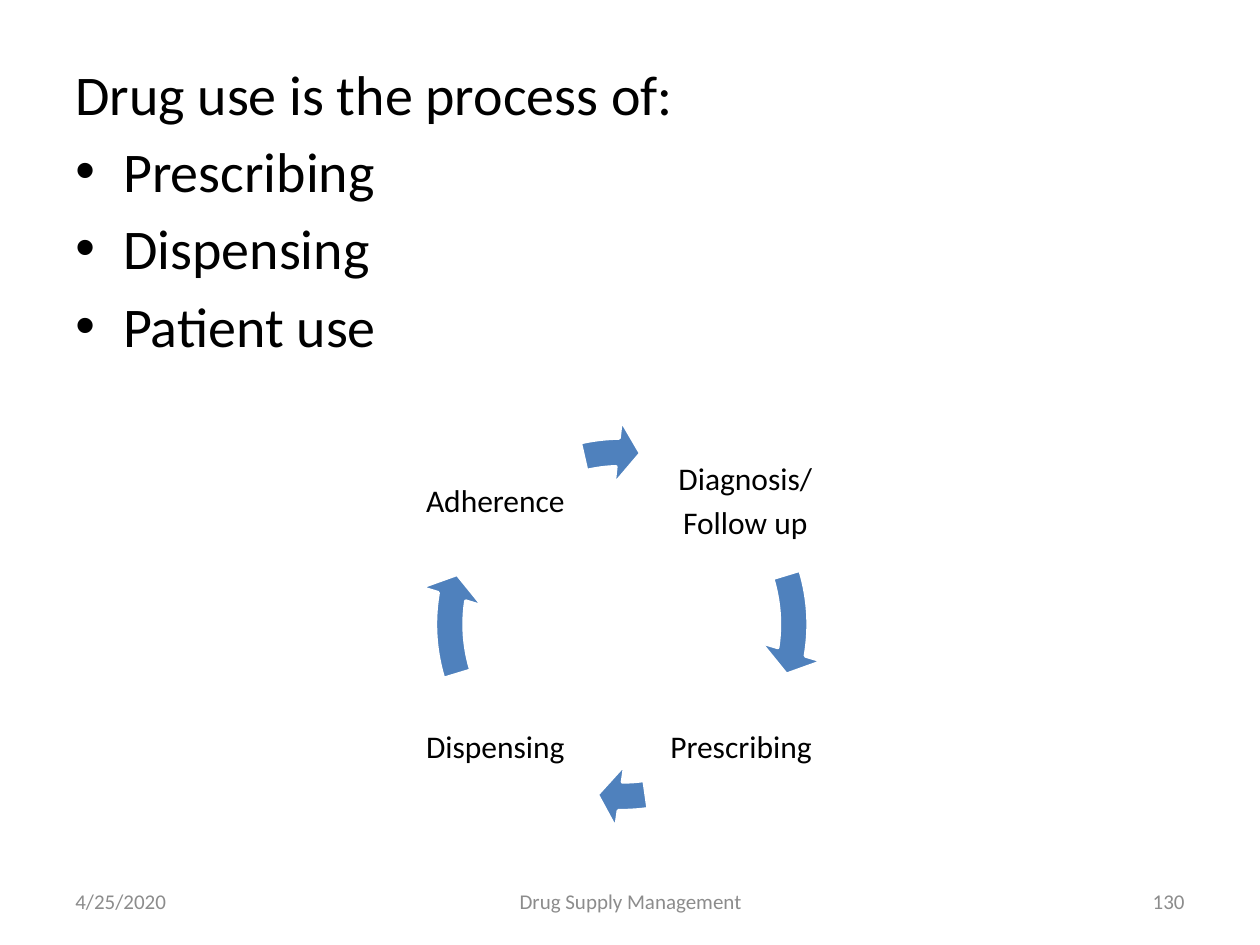
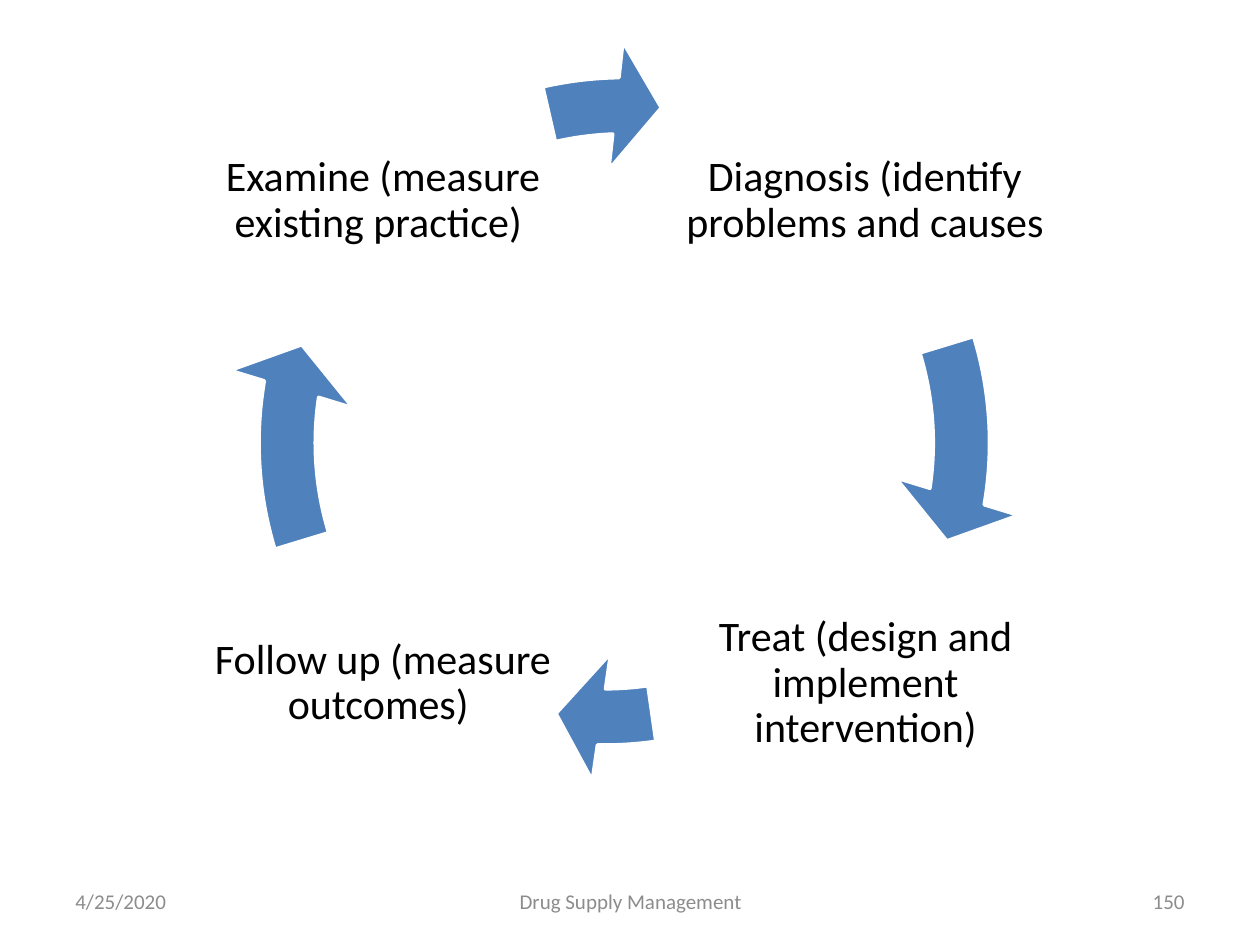
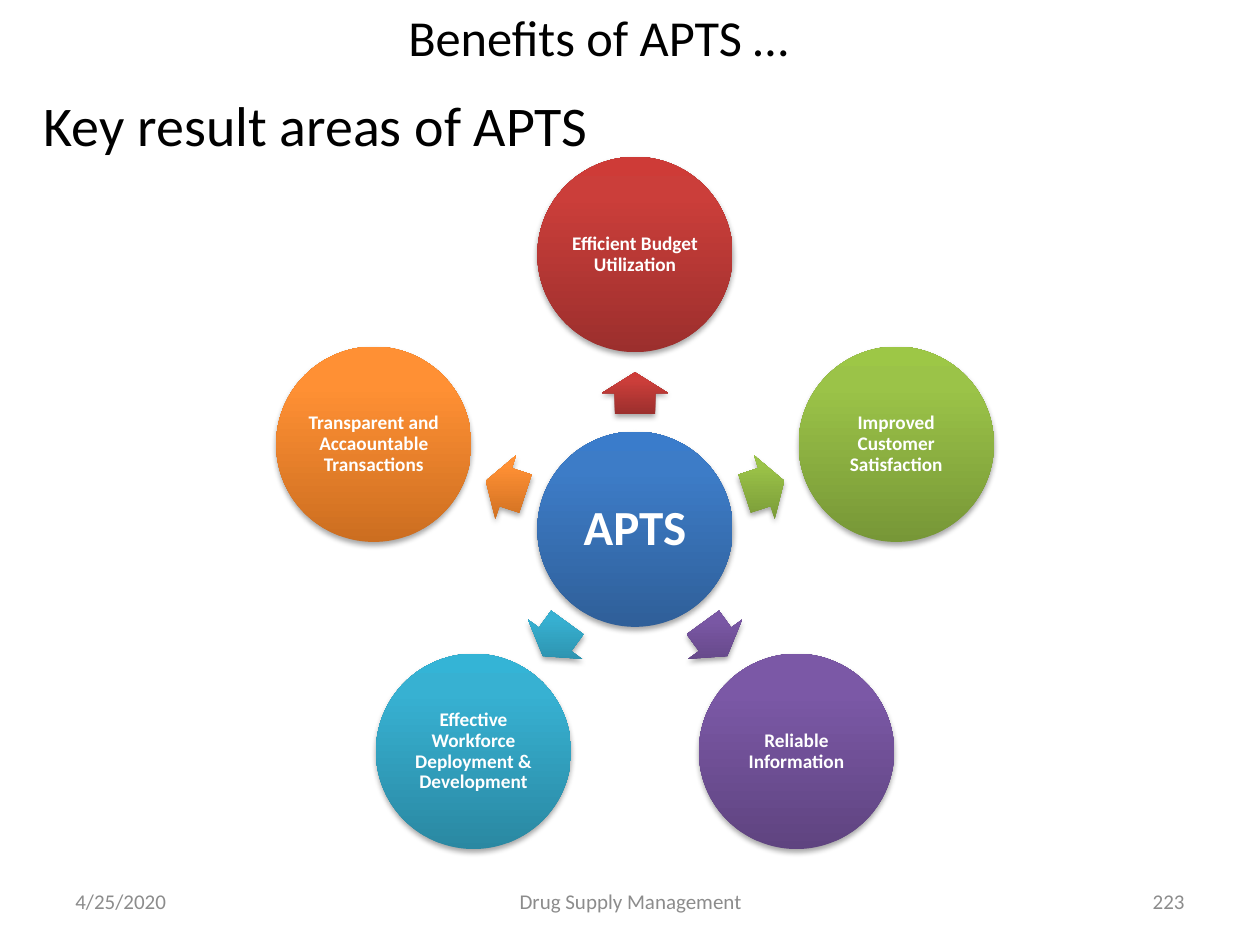
"""Build three slides on drug use, its improvement cycle and APTS benefits."""
from dataclasses import dataclass
from math import cos, radians, sin

from pptx import Presentation
from pptx.dml.color import RGBColor
from pptx.enum.shapes import MSO_SHAPE
from pptx.enum.text import MSO_ANCHOR, PP_ALIGN
from pptx.oxml import parse_xml
from pptx.oxml.ns import nsdecls
from pptx.util import Inches, Pt

LEFT, CENTER, RIGHT = PP_ALIGN.LEFT, PP_ALIGN.CENTER, PP_ALIGN.RIGHT
TOP, MIDDLE = MSO_ANCHOR.TOP, MSO_ANCHOR.MIDDLE
OVAL, ARROW, CURVE = MSO_SHAPE.OVAL, MSO_SHAPE.RIGHT_ARROW, MSO_SHAPE.CIRCULAR_ARROW

FONT = "Calibri"
BLACK, WHITE, GREY, BLUE = "000000", "FFFFFF", "8C8C8C", "4F81BD"
HUB_X, HUB_Y, BALL = 5.04, 4.2, 1.55
SPOKE, REACH = 2.18, 1.08
TIPS = [(5.5, 205.85), (54.27, 49.11), (113.5, 97.85), (161.14, 154.27)]


@dataclass
class Style:
    """Look of a block of text."""
    size: float
    color: str = BLACK
    bold: bool = False
    align: PP_ALIGN = LEFT
    anchor: MSO_ANCHOR = TOP
    before: float = 0
    after: float = 0
    lead: float = 1.0
    inset: tuple[float, float] = (0.1, 0.05)


@dataclass
class Label:
    """Text at a place, in inches."""
    lines: list[str]
    left: float
    top: float
    width: float
    height: float


@dataclass
class Wheel:
    """Ring of four labels joined by curved arrows."""
    size: float
    side: float
    rings: list[tuple[float, float]]
    labels: list[Label]


@dataclass
class Ball:
    """Shaded circle with its caption."""
    text: str
    dark: str
    mid: str
    light: str


BODY = Style(32, before=5.8)
TITLE = Style(28.8, align=CENTER, anchor=MIDDLE)

USE = Wheel(18, 3.25, [(3.31, 3.33)] * 4, [
    Label(["Diagnosis/", "Follow up"], 5.09, 3.41, 1.65, 1.15),
    Label(["Prescribing "], 5.13, 5.36, 1.56, 1.15),
    Label(["Dispensing "], 3.18, 5.36, 1.56, 1.15),
    Label(["Adherence "], 3.29, 3.41, 1.34, 1.15),
])
CYCLE = Wheel(24, 6.37, [(1.77, 0.33), (1.61, -0.17), (1.77, 0.33), (1.77, 0.33)], [
    Label(["Diagnosis (identify problems and causes"], 5.25, 0.47, 3.23, 2.25),
    Label(["Treat (design and implement intervention)"], 5.34, 4.3, 3.06, 2.25),
    Label(["Follow up (measure outcomes) "], 1.51, 4.3, 3.06, 2.25),
    Label(["Examine (measure existing practice) "], 1.73, 0.47, 2.62, 2.25),
])
HUB = Ball("APTS", "2F5F99", "3D7CC7", "3A7CCB")
BALLS = [
    Ball("Efficient Budget Utilization", "9C2F2D", "CB3E3A", "CE3B37"),
    Ball("Improved Customer Satisfaction", "779737", "9BC348", "9DC746"),
    Ball("Reliable Information", "5F4480", "7B58A6", "7C57A8"),
    Ball("Effective Workforce Deployment & Development", "2A88A2", "37B1D2", "34B4D6"),
    Ball("Transparent and Accaountable Transactions", "CC6E20", "FF9034", "FF9136"),
]


def rgb(code: str) -> RGBColor:
    """Turn a hex string into a colour."""
    return RGBColor.from_string(code)


def tight(size: float, color: str = BLACK, bold: bool = False, inset: float = 0.03) -> Style:
    """Return the centred style used inside diagrams."""
    return Style(size, color, bold, CENTER, MIDDLE, after=round(size / 3, 1),
                 lead=0.9, inset=(inset, inset))


def write(shape, lines: list[str], style: Style) -> None:
    """Fill a shape with styled paragraphs."""
    frame = shape.text_frame
    frame.word_wrap = True
    frame.vertical_anchor = style.anchor
    frame.margin_left = frame.margin_right = Inches(style.inset[0])
    frame.margin_top = frame.margin_bottom = Inches(style.inset[1])
    frame.text = "\n".join(lines)
    for para in frame.paragraphs:
        para.alignment = style.align
        para.line_spacing = style.lead
        para.space_before = Pt(style.before)
        para.space_after = Pt(style.after)
        font = para.font
        font.name, font.size, font.bold = FONT, Pt(style.size), style.bold
        font.color.rgb = rgb(style.color)


def put(slide, label: Label, style: Style):
    """Add a text box."""
    box = slide.shapes.add_textbox(Inches(label.left), Inches(label.top),
                                   Inches(label.width), Inches(label.height))
    write(box, label.lines, style)
    return box


def dot(para) -> None:
    """Give a paragraph a hanging bullet."""
    props = para._p.get_or_add_pPr()
    props.set("marL", str(Inches(0.38)))
    props.set("indent", str(-Inches(0.38)))
    props.append(parse_xml(f'<a:buFont {nsdecls("a")} typeface="Arial"/>'))
    props.append(parse_xml(f'<a:buChar {nsdecls("a")} char="•"/>'))


def spin(slide, wheel: Wheel) -> None:
    """Draw a wheel of labels and curved arrows."""
    for label, ring, (tip, tail) in zip(wheel.labels, wheel.rings, TIPS):
        put(slide, label, tight(wheel.size))
        arrow = slide.shapes.add_shape(CURVE, Inches(ring[0]), Inches(ring[1]),
                                       Inches(wheel.side), Inches(wheel.side))
        arrow.shadow.inherit = False
        for spot, value in enumerate((0.07, 4.65, tip, tail, 0.08)):
            arrow.adjustments[spot] = value
        arrow.fill.solid()
        arrow.fill.fore_color.rgb = rgb(BLUE)
        arrow.line.color.rgb = rgb(WHITE)
        arrow.line.width = Pt(2)


def shade(slide, kind: MSO_SHAPE, x: float, y: float, width: float, height: float, ball: Ball):
    """Add a shape centred on a point, with gradient and shadow."""
    shape = slide.shapes.add_shape(kind, Inches(x - width / 2), Inches(y - height / 2),
                                   Inches(width), Inches(height))
    stops = "".join(
        f'<a:gs pos="{spot}"><a:srgbClr val="{code}"/></a:gs>'
        for spot, code in ((0, ball.dark), (80000, ball.mid), (100000, ball.light)))
    props = shape._element.spPr
    props.append(parse_xml(
        f'<a:gradFill {nsdecls("a")} rotWithShape="0"><a:gsLst>{stops}</a:gsLst>'
        '<a:lin ang="16200000" scaled="0"/></a:gradFill>'))
    shape.line.fill.background()
    props.append(parse_xml(
        f'<a:effectLst {nsdecls("a")}><a:outerShdw blurRad="40000" dist="23000" '
        'dir="5400000" rotWithShape="0"><a:srgbClr val="000000"><a:alpha val="35000"/>'
        '</a:srgbClr></a:outerShdw></a:effectLst>'))
    return shape


def spread(slide) -> None:
    """Draw the hub and the balls around it."""
    hub = shade(slide, OVAL, HUB_X, HUB_Y, BALL, BALL, HUB)
    write(hub, [HUB.text], tight(28, WHITE, True, 0.04))
    for step, ball in enumerate(BALLS):
        angle = 360 / len(BALLS) * step - 90
        across, down = cos(radians(angle)), sin(radians(angle))
        arrow = shade(slide, ARROW, HUB_X + REACH * across, HUB_Y + REACH * down,
                      0.33, 0.53, ball)
        arrow.adjustments[0] = 0.6
        arrow.rotation = angle % 360
        disc = shade(slide, OVAL, HUB_X + SPOKE * across, HUB_Y + SPOKE * down,
                     BALL, BALL, ball)
        write(disc, [ball.text], tight(11, WHITE, True, 0.02))


def foot(slide, page: str) -> None:
    """Add date, page number and deck name."""
    for text, left, width, align in (("4/25/2020", 0.5, 2.33, LEFT),
                                     (page, 7.17, 2.33, RIGHT),
                                     ("Drug Supply Management", 3.42, 3.17, CENTER)):
        put(slide, Label([text], left, 6.95, width, 0.4),
            Style(12, GREY, align=align, anchor=MIDDLE))


def main() -> None:
    """Build and save the deck."""
    deck = Presentation()
    deck.slide_width, deck.slide_height = Inches(10), Inches(7.5)
    first, second, third = (deck.slides.add_slide(deck.slide_layouts[6]) for _ in range(3))

    lines = ["Drug use is the process of:", "Prescribing", "Dispensing", "Patient use"]
    body = put(first, Label(lines, 0.5, 0.42, 9, 6.75), BODY)
    for para in body.text_frame.paragraphs[1:]:
        dot(para)
    spin(first, USE)

    spin(second, CYCLE)

    put(third, Label(["Benefits of APTS …"], 0.25, 0.04, 9, 0.5), TITLE)
    put(third, Label(["Key result areas of APTS"], 0.25, 0.67, 9.5, 6.25), BODY)
    spread(third)

    for slide, page in ((first, "130"), (second, "150"), (third, "223")):
        foot(slide, page)
    deck.save("out.pptx")


if __name__ == "__main__":
    main()
